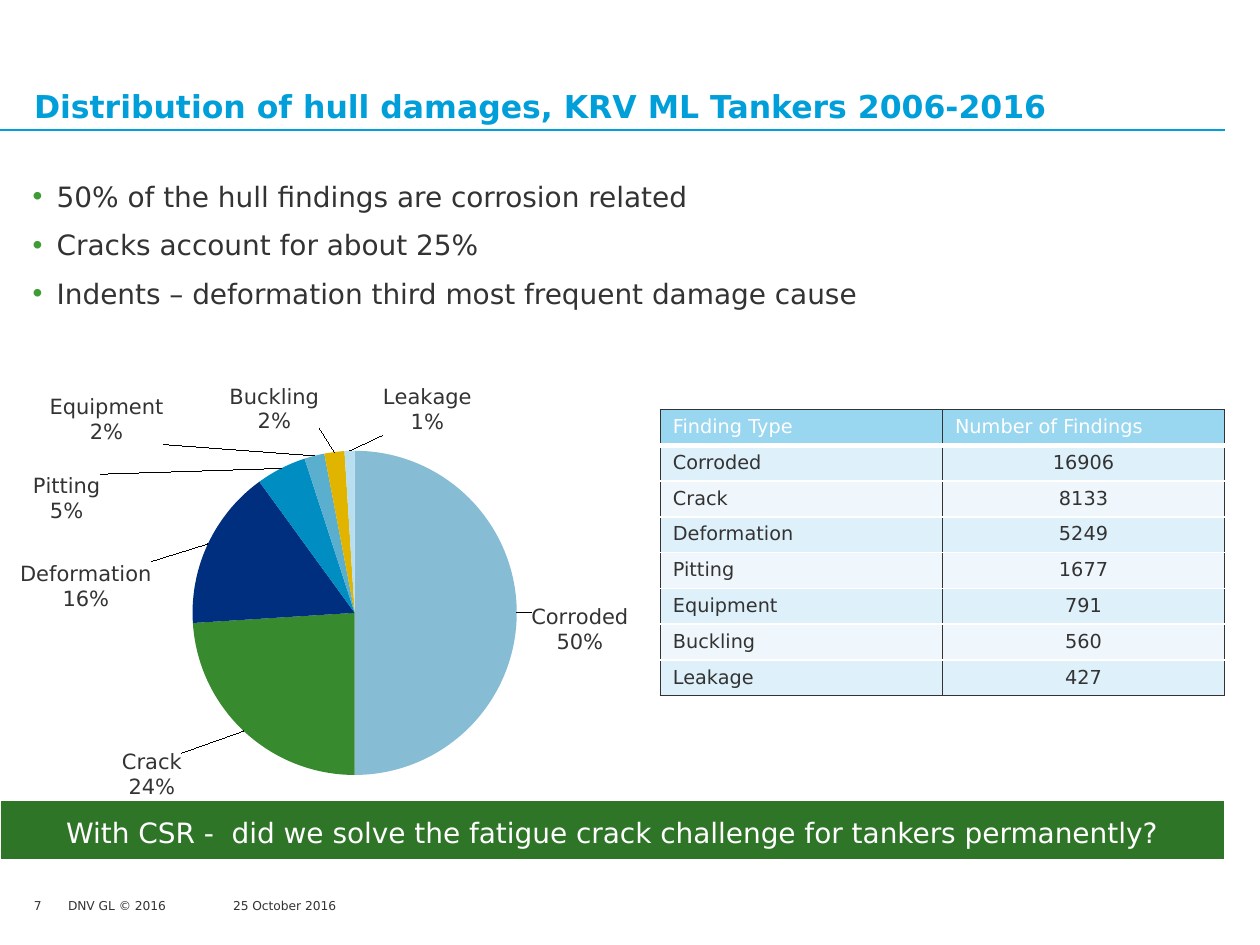
import pptx
import pptx.chart.data
import pptx.dml.color
import pptx.enum.chart
import pptx.enum.shapes
import pptx.enum.text
import pptx.oxml
import pptx.oxml.ns
import pptx.util
from lxml import etree
from pptx.dml.color import RGBColor
from pptx.util import Inches

FONT = "DejaVu Sans"
TEXT = RGBColor(0x33, 0x33, 0x33)
WHITE = RGBColor(0xFF, 0xFF, 0xFF)
SKY = RGBColor(0x00, 0x9F, 0xDA)
BANNER_GREEN = RGBColor(0x2F, 0x75, 0x28)
BULLET_GREEN = RGBColor(0x3F, 0x9C, 0x35)
HEADER_FILL = RGBColor(0x99, 0xD6, 0xF0)
ROW_FILLS = (RGBColor(0xDE, 0xF0, 0xF9), RGBColor(0xEF, 0xF7, 0xFC))

FINDINGS = [("Corroded", 16906), ("Crack", 8133), ("Deformation", 5249), ("Pitting", 1677),
            ("Equipment", 791), ("Buckling", 560), ("Leakage", 427)]

# Share in percent, slice colour, label shift as a fraction of the chart
SLICES = [
    (50, RGBColor(0x87, 0xBC, 0xD5), (0.01, 0.04)),
    (24, RGBColor(0x38, 0x8A, 0x2E), (-0.08, 0.04)),
    (16, RGBColor(0x00, 0x2F, 0x80), (-0.07, 0.17)),
    (5, RGBColor(0x00, 0x8D, 0xC2), (-0.25, 0.15)),
    (2, RGBColor(0x5A, 0xAE, 0xCE), (-0.21, -0.01)),
    (2, RGBColor(0xE1, 0xB4, 0x00), (-0.02, -0.04)),
    (1, RGBColor(0xB8, 0xDF, 0xF0), (0.11, -0.02)),
]


def style(paragraph, size, color, bold=False):
    font = paragraph.font
    font.name, font.size, font.bold = FONT, pptx.util.Pt(size), bold
    font.color.rgb = color


def add_text(slide, box, text, size, color, bold=False, anchor=pptx.enum.text.MSO_ANCHOR.TOP):
    frame = slide.shapes.add_textbox(*box).text_frame
    frame.word_wrap = True
    frame.vertical_anchor = anchor
    frame.margin_left = frame.margin_right = frame.margin_top = frame.margin_bottom = 0
    frame.text = text
    for paragraph in frame.paragraphs:
        style(paragraph, size, color, bold)
    return frame


def add_title(slide, box, text):
    left, top, width, height = box
    add_text(slide, box, text, 18, SKY, True, pptx.enum.text.MSO_ANCHOR.BOTTOM)
    rule_y = top + height + Inches(0.04)
    rule = slide.shapes.add_connector(
        pptx.enum.shapes.MSO_CONNECTOR.STRAIGHT, 0, rule_y, left + width, rule_y)
    rule.line.color.rgb = SKY
    rule.line.width = pptx.util.Pt(1)
    etree.SubElement(rule._element.spPr, pptx.oxml.ns.qn("a:effectLst"))


def add_bullets(slide, box, lines):
    frame = add_text(slide, box, "\n".join(lines), 16, TEXT)
    for index, paragraph in enumerate(frame.paragraphs):
        paragraph.line_spacing = 1.13
        if index:
            paragraph.space_before = pptx.util.Pt(6)
        properties = paragraph._p.get_or_add_pPr()
        properties.set("marL", str(Inches(0.19)))
        properties.set("indent", str(-Inches(0.19)))
        bullet = pptx.oxml.parse_xml(
            f'<a:pPr {pptx.oxml.ns.nsdecls("a")}><a:buClr><a:srgbClr val="{BULLET_GREEN}"/>'
            '</a:buClr><a:buFont typeface="Arial"/><a:buChar char="•"/></a:pPr>')
        default_font = properties.find(pptx.oxml.ns.qn("a:defRPr"))
        for element in list(bullet):
            default_font.addprevious(element)


def set_borders(cell, **sides):
    """Draw each side (L, R, T, B), given as (colour, points)."""
    properties = cell._tc.get_or_add_tcPr()
    for position, side in enumerate("LRTB"):
        color, width = sides[side]
        properties.insert(position, pptx.oxml.parse_xml(
            f'<a:ln{side} {pptx.oxml.ns.nsdecls("a")} w="{pptx.util.Pt(width)}"><a:solidFill>'
            f'<a:srgbClr val="{color}"/></a:solidFill></a:ln{side}>'))


def add_findings_table(slide, box):
    rows = [("Finding Type", "Number of Findings"), *FINDINGS]
    table = slide.shapes.add_table(len(rows), 2, *box).table
    last = len(rows) - 1
    dark, light, header_rule = (TEXT, 1), (WHITE, 1), (WHITE, 3)
    for row, values in enumerate(rows):
        top = dark if row == 0 else header_rule if row == 1 else light
        bottom = header_rule if row == 0 else dark if row == last else light
        for column, value in enumerate(values):
            cell = table.cell(row, column)
            cell.text = str(value)
            cell.fill.solid()
            cell.fill.fore_color.rgb = ROW_FILLS[(row - 1) % 2] if row else HEADER_FILL
            paragraph = cell.text_frame.paragraphs[0]
            style(paragraph, 11, TEXT if row else WHITE)
            if row and column:
                paragraph.alignment = pptx.enum.text.PP_ALIGN.CENTER
            set_borders(cell, L=dark, R=dark, T=top, B=bottom)


def place_labels(series):
    """Show category and percent outside each slice, shifted, with leader lines."""
    shown = ('<c:dLblPos val="outEnd"/><c:showLegendKey val="0"/><c:showVal val="0"/>'
             '<c:showCatName val="1"/><c:showSerName val="0"/><c:showPercent val="1"/>'
             '<c:showBubbleSize val="0"/><c:separator>\n</c:separator>')
    labels = "".join(
        f'<c:dLbl><c:idx val="{index}"/><c:layout><c:manualLayout><c:x val="{x}"/>'
        f'<c:y val="{y}"/></c:manualLayout></c:layout>{shown}</c:dLbl>'
        for index, (_, _, (x, y)) in enumerate(SLICES))
    element = series.data_labels._element
    element.getparent().replace(element, pptx.oxml.parse_xml(
        f'<c:dLbls {pptx.oxml.ns.nsdecls("c")}>{labels}{shown}'
        '<c:showLeaderLines val="1"/></c:dLbls>'))


def add_findings_pie(slide, box):
    data = pptx.chart.data.CategoryChartData()
    data.categories = [name for name, _ in FINDINGS]
    data.add_series("Series 1", [share for share, _, _ in SLICES])
    chart = slide.shapes.add_chart(pptx.enum.chart.XL_CHART_TYPE.PIE, *box, data).chart
    chart.has_legend = chart.has_title = False
    chart.font.name, chart.font.size = FONT, pptx.util.Pt(12)
    chart.font.color.rgb = TEXT
    plot = chart.plots[0]
    plot.vary_by_categories = True
    series = plot.series[0]
    for index, (_, color, _) in enumerate(SLICES):
        fill = series.points[index].format.fill
        fill.solid()
        fill.fore_color.rgb = color
    place_labels(series)
    plot_area = chart._chartSpace.chart.plotArea
    for layout in plot_area.findall(pptx.oxml.ns.qn("c:layout")):
        plot_area.remove(layout)
    plot_area.insert(0, pptx.oxml.parse_xml(
        f'<c:layout {pptx.oxml.ns.nsdecls("c")}><c:manualLayout>'
        '<c:layoutTarget val="inner"/><c:xMode val="edge"/><c:yMode val="edge"/>'
        '<c:x val="0.27"/><c:y val="0.16"/><c:w val="0.46"/><c:h val="0.78"/>'
        '</c:manualLayout></c:layout>'))


def add_banner(slide, box, text):
    banner = slide.shapes.add_shape(pptx.enum.shapes.MSO_SHAPE.RECTANGLE, *box)
    banner.shadow.inherit = False
    banner.fill.solid()
    banner.fill.fore_color.rgb = BANNER_GREEN
    banner.line.color.rgb = WHITE
    banner.line.width = pptx.util.Pt(0.75)
    frame = banner.text_frame
    frame.word_wrap = True
    frame.vertical_anchor = pptx.enum.text.MSO_ANCHOR.MIDDLE
    paragraph = frame.paragraphs[0]
    paragraph.text = text
    paragraph.alignment = pptx.enum.text.PP_ALIGN.CENTER
    paragraph.line_spacing = 1.13
    style(paragraph, 16, WHITE)


def add_footer(slide, top):
    for left, width, text in ((0.27, 0.26, "7"), (0.54, 1.2, "DNV GL © 2016"),
                              (1.85, 3.07, "25 October 2016")):
        add_text(slide, (Inches(left), top, Inches(width), Inches(0.2)), text, 7, TEXT)


def main():
    presentation = pptx.Presentation()
    presentation.slide_width, presentation.slide_height = Inches(10), Inches(7.5)
    slide = presentation.slides.add_slide(presentation.slide_layouts[6])
    add_title(slide, (Inches(0.27), Inches(0.26), Inches(9.45), Inches(0.73)),
              "Distribution of hull damages, KRV ML Tankers 2006-2016")
    add_bullets(slide, (Inches(0.26), Inches(1.39), Inches(9.46), Inches(5.17)), [
        "50% of the hull findings are corrosion related",
        "Cracks account for about 25%",
        "Indents – deformation third most frequent damage cause",
    ])
    add_findings_table(slide, (Inches(5.24), Inches(3.25), Inches(4.48), Inches(2.24)))
    add_banner(slide, (0, Inches(6.35), Inches(9.72), Inches(0.47)),
               "With CSR -  did we solve the fatigue crack challenge for tankers permanently?")
    add_findings_pie(slide, (0, Inches(3.05), Inches(5.63), Inches(3.3)))
    add_footer(slide, Inches(7.13))
    presentation.save("out.pptx")


if __name__ == "__main__":
    main()
